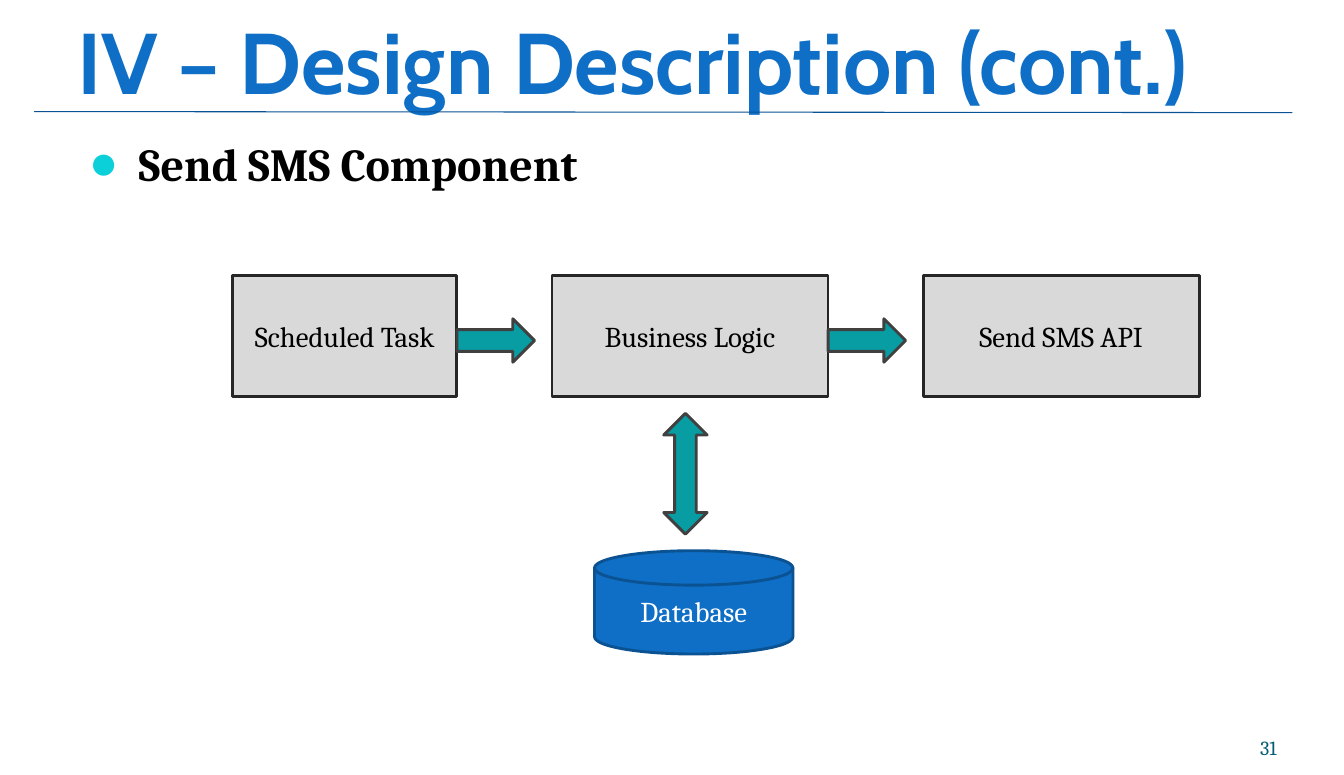
from dataclasses import dataclass

import pptx
import pptx.dml.color
import pptx.enum.shapes
import pptx.enum.text
import pptx.oxml
import pptx.oxml.ns
import pptx.util
from lxml import etree

Inches = pptx.util.Inches
Shapes = pptx.enum.shapes.MSO_SHAPE
Align = pptx.enum.text.PP_ALIGN
Anchor = pptx.enum.text.MSO_ANCHOR
qn = pptx.oxml.ns.qn


@dataclass(frozen=True)
class Theme:
    heading_font: str = "Cabin"
    body_font: str = "Cambria"
    title_size: int = 60
    list_size: int = 32
    label_size: int = 20
    number_size: int = 14
    blue: str = "0F6FC6"
    dark_blue: str = "0B5292"
    rule: str = "095295"
    bullet: str = "0BD0D9"
    number: str = "045D75"
    box_fill: str = "D9D9D9"
    box_line: str = "262626"
    arrow_fill: str = "089CA3"
    arrow_line: str = "404040"
    black: str = "000000"
    white: str = "FFFFFF"


THEME = Theme()


def color(value):
    return pptx.dml.color.RGBColor.from_string(value)


def place(shape, box):
    shape.left, shape.top, shape.width, shape.height = (Inches(value) for value in box)


def format_frame(frame, anchor, margins):
    frame.word_wrap = True
    frame.auto_size = pptx.enum.text.MSO_AUTO_SIZE.NONE
    frame.vertical_anchor = anchor
    frame.margin_left, frame.margin_top, frame.margin_right, frame.margin_bottom = (
        Inches(value) for value in margins)


def add_text(paragraph, text, font, size, fill, bold, align):
    paragraph.alignment = align
    run = paragraph.add_run()
    run.text = text
    run.font.name = font
    run.font.size = pptx.util.Pt(size)
    run.font.color.rgb = color(fill)
    run.font.bold = bold
    return run


def add_title(slide, box, text):
    title = slide.shapes.title
    place(title, box)
    format_frame(title.text_frame, Anchor.BOTTOM, (0, 0.06, 0, 0))
    run = add_text(title.text_frame.paragraphs[0], text, THEME.heading_font,
                   THEME.title_size, THEME.blue, True, Align.LEFT)
    outline = pptx.oxml.parse_xml(
        f'<a:ln {pptx.oxml.ns.nsdecls("a")} w="{pptx.util.Pt(1.45)}"><a:solidFill>'
        f'<a:srgbClr val="{THEME.white}"/></a:solidFill></a:ln>')
    run.font._element.insert(0, outline)


def add_list(slide, box, items):
    body = slide.placeholders[1]
    place(body, box)
    format_frame(body.text_frame, Anchor.TOP, (0.11, 0.06, 0.11, 0.06))
    for index, item in enumerate(items):
        paragraph = body.text_frame.paragraphs[0] if index == 0 else body.text_frame.add_paragraph()
        paragraph.space_before = pptx.util.Pt(0)
        properties = paragraph._p.get_or_add_pPr()
        properties.set("marL", str(Inches(0.48)))
        properties.set("indent", str(-Inches(0.48)))
        bullet_color = etree.SubElement(properties, qn("a:buClr"))
        etree.SubElement(bullet_color, qn("a:srgbClr"), val=THEME.bullet)
        etree.SubElement(properties, qn("a:buSzPct"), val="107000")
        etree.SubElement(properties, qn("a:buChar"), char="●")
        add_text(paragraph, item, THEME.body_font, THEME.list_size, THEME.black, True, Align.LEFT)


def add_rule(slide, start, end):
    line = slide.shapes.add_connector(
        pptx.enum.shapes.MSO_CONNECTOR.STRAIGHT, *(Inches(value) for value in start + end))
    line.line.color.rgb = color(THEME.rule)
    line.line.width = pptx.util.Pt(0.75)
    etree.SubElement(line._element.spPr, qn("a:effectLst"))


def add_page_number(slide, box, number):
    text_box = slide.shapes.add_textbox(*(Inches(value) for value in box))
    format_frame(text_box.text_frame, Anchor.BOTTOM, (0, 0, 0, 0))
    add_text(text_box.text_frame.paragraphs[0], number, THEME.body_font,
             THEME.number_size, THEME.number, False, Align.RIGHT)


def add_block(slide, kind, box, fill, line, label="", label_color=THEME.black):
    shape = slide.shapes.add_shape(kind, *(Inches(value) for value in box))
    shape.shadow.inherit = False
    shape.fill.solid()
    shape.fill.fore_color.rgb = color(fill)
    shape.line.color.rgb = color(line)
    shape.line.width = pptx.util.Pt(2)
    if label:
        format_frame(shape.text_frame, Anchor.MIDDLE, (0.1, 0.05, 0.1, 0.05))
        add_text(shape.text_frame.paragraphs[0], label, THEME.body_font,
                 THEME.label_size, label_color, False, Align.CENTER)


def add_component_diagram(slide, box):
    left, top, width, height = box
    row_height, arrow_length, arrow_width = 1.17, 0.75, 0.42
    gap = 0.92
    steps = [("Scheduled Task", 2.17), ("Business Logic", 2.67), ("Send SMS API", 2.67)]

    step_left = left
    for index, (label, step_width) in enumerate(steps):
        add_block(slide, Shapes.RECTANGLE, (step_left, top, step_width, row_height),
                  THEME.box_fill, THEME.box_line, label)
        if index < len(steps) - 1:
            arrow_top = top + (row_height - arrow_width) / 2 + 0.04
            add_block(slide, Shapes.RIGHT_ARROW,
                      (step_left + step_width, arrow_top, arrow_length, arrow_width),
                      THEME.arrow_fill, THEME.arrow_line)
        step_left += step_width + gap

    add_block(slide, Shapes.UP_DOWN_ARROW, (left + 4.17, top + 1.33, arrow_width, row_height),
              THEME.arrow_fill, THEME.arrow_line)
    add_block(slide, Shapes.FLOWCHART_MAGNETIC_DISK,
              (left + 3.5, top + height - 1, 1.92, 1),
              THEME.blue, THEME.dark_blue, "Database", THEME.white)


def main():
    presentation = pptx.Presentation()
    presentation.slide_width = Inches(13)
    presentation.slide_height = Inches(7.5)
    slide = presentation.slides.add_slide(presentation.slide_layouts[1])
    add_title(slide, (0.75, -0.17, 11.7, 1.25), "IV – Design Description (cont.)")
    add_list(slide, (0.75, 1.25, 11.7, 4.8), ["Send SMS Component"])
    add_page_number(slide, (11.27, 6.95, 1.08, 0.4), "31")
    add_rule(slide, (0.33, 1.08), (12.5, 1.09))
    add_component_diagram(slide, (2.25, 2.67, 9.34, 3.66))
    presentation.save("out.pptx")


if __name__ == "__main__":
    main()
